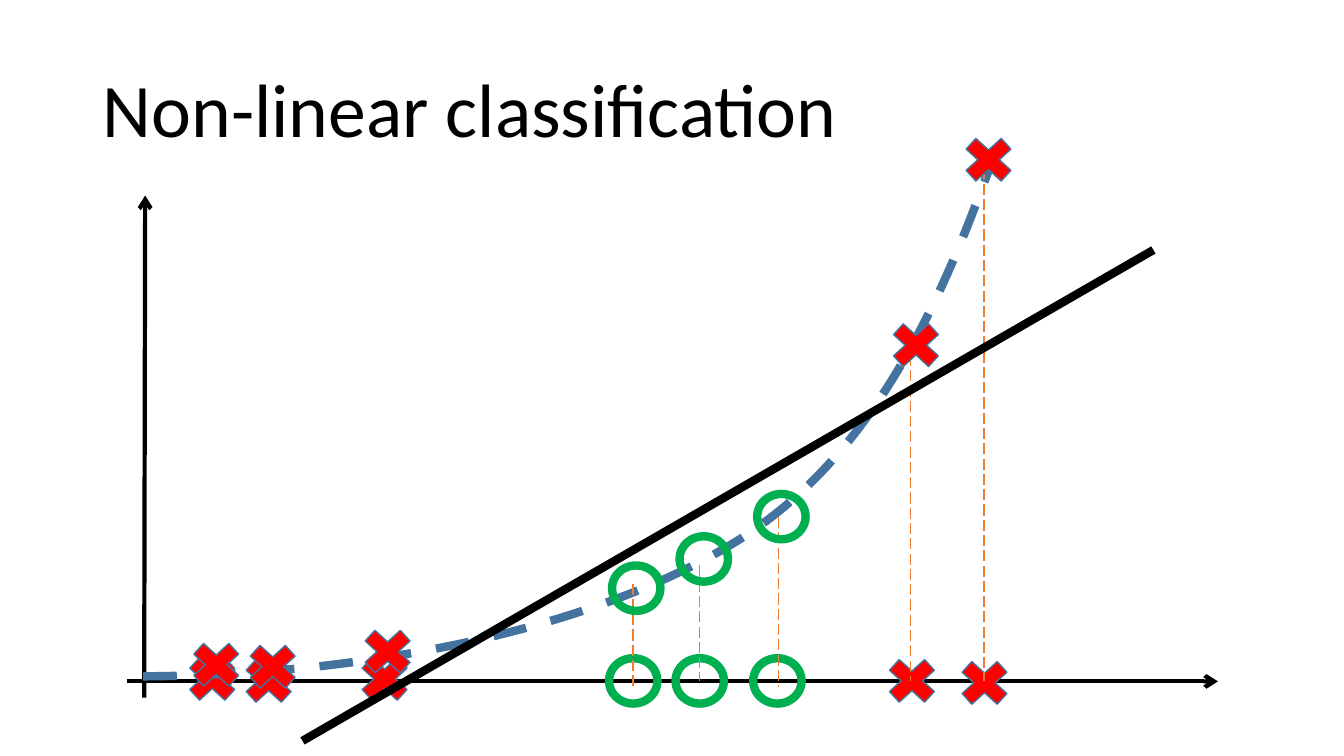
from pptx import Presentation
from pptx.dml.color import RGBColor
from pptx.enum.dml import MSO_LINE
from pptx.enum.shapes import MSO_CONNECTOR, MSO_SHAPE
from pptx.enum.text import MSO_ANCHOR, MSO_AUTO_SIZE, PP_ALIGN
from pptx.oxml.ns import qn
from pptx.util import Inches, Pt
from lxml import etree

STRAIGHT = MSO_CONNECTOR.STRAIGHT
CROSS = MSO_SHAPE.MATH_MULTIPLY
RING = MSO_SHAPE.OVAL
DASH = MSO_LINE.DASH
LONG = MSO_LINE.LONG_DASH
MIDDLE = MSO_ANCHOR.MIDDLE
LEFT = PP_ALIGN.LEFT
NO_FIT = MSO_AUTO_SIZE.NONE

COLORS = {"black": "000000", "red": "FF0000", "blue": "43739E",
          "green": "00B050", "orange": "ED7D31"}

BASE_RED = [(1.77, 6.43), (2.33, 6.45), (3.48, 6.43), (9.43, 6.47), (8.71, 6.45)]
BASE_GREEN = [(7.47, 6.53), (6.04, 6.53), (6.7, 6.53)]
CURVE_RED = [(1.81, 6.29), (2.37, 6.31), (3.51, 6.16), (9.47, 1.28), (8.75, 3.12)]
CURVE_GREEN = [(7.51, 4.9), (6.07, 5.61), (6.74, 5.32)]
DROPS = [(9.03, 3.37, 6.76), (9.76, 1.67, 6.76), (6.94, 5.61, 6.76),
         (6.28, 5.79, 6.82), (7.72, 5.13, 6.82)]
BENDS = [[(1.42, 6.71), (3.67, 6.7), (5.88, 6.24), (7.29, 5.38)],
         [(7.29, 5.38), (8.69, 4.52), (9.35, 2.95), (9.85, 1.57)]]
STEPS = 40


def color(name):
    return RGBColor.from_string(COLORS[name])


def stroke(shape, name, width, dash=None):
    shape.line.color.rgb = color(name)
    shape.line.width = Pt(width)
    if dash:
        shape.line.dash_style = dash


def add_title(slide, text):
    title = slide.shapes.title
    title.left, title.top = Inches(0.92), Inches(0.4)
    title.width, title.height = Inches(11.5), Inches(1.45)
    frame = title.text_frame
    frame.text = text
    frame.auto_size = NO_FIT
    frame.vertical_anchor = MIDDLE
    para = frame.paragraphs[0]
    para.alignment = LEFT
    para.line_spacing = 0.9
    font = para.runs[0].font
    font.name, font.size = "Calibri", Pt(54)
    font.color.rgb = color("black")


def add_line(slide, start, end, name, width, dash=None, arrow=False):
    line = slide.shapes.add_connector(
        STRAIGHT, *[Inches(v) for v in (*start, *end)])
    stroke(line, name, width, dash)
    props = line._element.spPr
    if arrow:
        etree.SubElement(props.find(qn("a:ln")), qn("a:tailEnd"), type="arrow")
    etree.SubElement(props, qn("a:effectLst"))


def add_cross(slide, left, top):
    cross = slide.shapes.add_shape(
        CROSS, Inches(left), Inches(top), Inches(0.67), Inches(0.61))
    cross.shadow.inherit = False
    cross.fill.solid()
    cross.fill.fore_color.rgb = color("red")
    stroke(cross, "blue", 1)


def add_ring(slide, left, top):
    ring = slide.shapes.add_shape(
        RING, Inches(left), Inches(top), Inches(0.48), Inches(0.45))
    ring.shadow.inherit = False
    ring.fill.background()
    stroke(ring, "green", 6)


def add_marks(slide, reds, greens):
    for spot in reds:
        add_cross(slide, *spot)
    for spot in greens:
        add_ring(slide, *spot)


def bend_point(bend, t):
    s = 1 - t
    weights = (s ** 3, 3 * s * s * t, 3 * s * t * t, t ** 3)
    return tuple(Inches(sum(w * p[axis] for w, p in zip(weights, bend)))
                 for axis in (0, 1))


def add_curve(slide):
    points = [bend_point(bend, step / STEPS)
              for bend in BENDS for step in range(1, STEPS + 1)]
    builder = slide.shapes.build_freeform(*bend_point(BENDS[0], 0))
    builder.add_line_segments(points, close=False)
    curve = builder.convert_to_shape()
    curve.shadow.inherit = False
    curve.fill.background()
    stroke(curve, "blue", 6, DASH)


def main():
    deck = Presentation()
    deck.slide_width, deck.slide_height = Inches(13.33), Inches(7.5)
    slide = deck.slides.add_slide(deck.slide_layouts[5])
    add_title(slide, "Non-linear classification")
    add_line(slide, (1.26, 6.76), (12.08, 6.76), "black", 3, arrow=True)
    add_marks(slide, BASE_RED, BASE_GREEN)
    add_line(slide, (1.43, 6.92), (1.44, 1.94), "black", 3, arrow=True)
    add_curve(slide)
    for x, top, bottom in DROPS:
        add_line(slide, (x, top), (x, bottom), "orange", 1, LONG)
    add_marks(slide, CURVE_RED, CURVE_GREEN)
    add_line(slide, (11.44, 2.48), (3, 7.35), "black", 6)
    deck.save("out.pptx")


if __name__ == "__main__":
    main()
